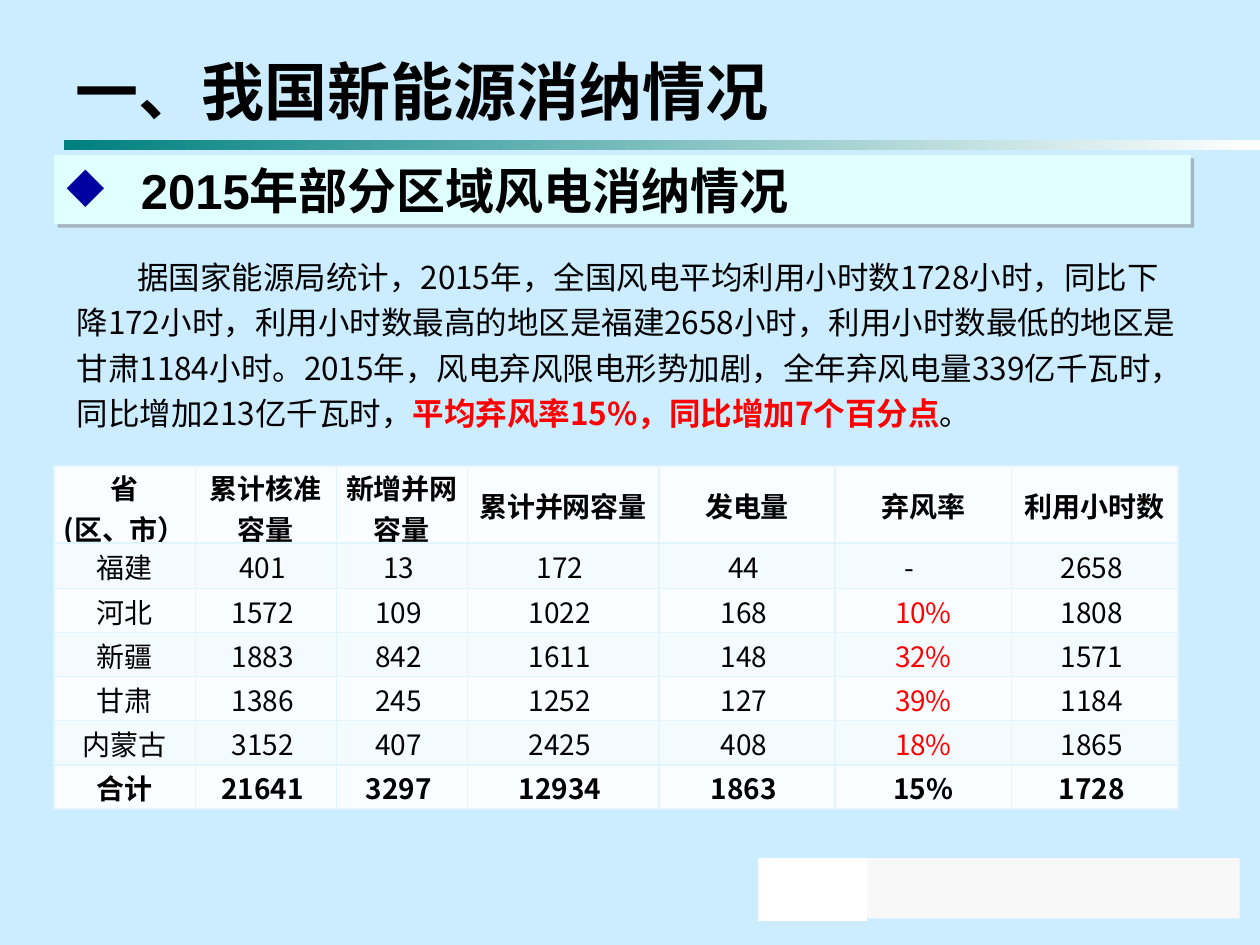
"""Build the slide on wind power absorption in selected Chinese regions, 2015."""
from lxml import etree
from pptx import Presentation
from pptx import util as u
from pptx.dml.color import RGBColor
from pptx.enum import shapes, text
from pptx.oxml import ns, parse_xml

W, H = 10, 7.5
SANS, LATIN = "Noto Sans CJK SC", "Arial"
COLORS = {
    "bg": "CCECFF", "teal": "008080", "white": "FFFFFF", "grey": "F8F8F8",
    "band": "E0FFFF", "bullet": "0000A0", "shadow": "808080", "text": "000000",
    "red": "FF0000", "border": "E2F4FF", "odd": "F4FBFF", "even": "FAFDFF",
}
TITLE = "一、我国新能源消纳情况"
HEADING = "2015年部分区域风电消纳情况"
BODY = [
    ("据国家能源局统计，2015年，全国风电平均利用小时数1728小时，同比下降172小时，"
     "利用小时数最高的地区是福建2658小时，利用小时数最低的地区是甘肃1184小时。"
     "2015年，风电弃风限电形势加剧，全年弃风电量339亿千瓦时，同比增加213亿千瓦时，", {}),
    ("平均弃风率15%，同比增加7个百分点", {"color": "red", "bold": True}),
    ("。", {}),
]
HEADER = ["省\n(区、市）", "累计核准容量", "新增并网容量", "累计并网容量", "发电量", "弃风率", "利用小时数"]
REGIONS = [
    ("福建", 401, 13, 172, 44, "-　", 2658),
    ("河北", 1572, 109, 1022, 168, "10%", 1808),
    ("新疆", 1883, 842, 1611, 148, "32%", 1571),
    ("甘肃", 1386, 245, 1252, 127, "39%", 1184),
    ("内蒙古", 3152, 407, 2425, 408, "18%", 1865),
]
TOTAL = ("合计", 21641, 3297, 12934, 1863, "15%", 1728)
COL_WIDTHS = [1.12, 1.12, 1.04, 1.52, 1.4, 1.4, 1.32]
ROW_HEIGHTS = [0.61, 0.36] + [0.35] * 5
NBSP = chr(160)


def rgb(name):
    return RGBColor.from_string(COLORS[name])


def write(p, content, size=18, color="text", bold=False, font=SANS):
    r = p.add_run()
    r.text = content
    r.font.size, r.font.bold, r.font.name = u.Pt(size), bold, font
    r.font.color.rgb = rgb(color)
    etree.SubElement(r.font._element, ns.qn("a:ea"), typeface=SANS)


def add_bar(s, box, fill):
    sp = s.shapes.add_shape(shapes.MSO_SHAPE.RECTANGLE, *map(u.Inches, box))
    sp.shadow.inherit = False
    sp.line.fill.background()
    if isinstance(fill, tuple):
        sp.fill.gradient()
        sp.fill.gradient_angle = 0
        for stop, name, position in zip(sp.fill.gradient_stops, fill, (0, 1)):
            stop.color.rgb = rgb(name)
            stop.position = position
    else:
        sp.fill.solid()
        sp.fill.fore_color.rgb = rgb(fill)
    return sp


def add_box(s, box, anchor):
    tf = s.shapes.add_textbox(*map(u.Inches, box)).text_frame
    tf.word_wrap = True
    tf.vertical_anchor = anchor
    return tf.paragraphs[0]


def add_heading(s, box):
    sp = add_bar(s, box, "band")
    effects = sp._element.spPr.find(ns.qn("a:effectLst"))
    effects.append(parse_xml(
        f'<a:outerShdw {ns.nsdecls("a")} blurRad="0" dist="{u.Pt(2.8)}" dir="2700000" '
        f'algn="ctr" rotWithShape="0"><a:srgbClr val="{COLORS["shadow"]}">'
        '<a:alpha val="50000"/></a:srgbClr></a:outerShdw>'))
    tf = sp.text_frame
    tf.word_wrap = True
    tf.vertical_anchor = text.MSO_ANCHOR.MIDDLE
    tf.margin_top = tf.margin_bottom = u.Inches(0.04)
    p = tf.paragraphs[0]
    p.alignment = text.PP_ALIGN.LEFT
    indent(p, 0.59, -0.59)
    pPr = p._p.get_or_add_pPr()
    color = etree.SubElement(pPr, ns.qn("a:buClr"))
    etree.SubElement(color, ns.qn("a:srgbClr"), val=COLORS["bullet"])
    etree.SubElement(pPr, ns.qn("a:buChar"), char="◆")
    write(p, HEADING, size=28, bold=True, font=LATIN)


def indent(p, left, first):
    pPr = p._p.get_or_add_pPr()
    pPr.set("marL", str(u.Inches(left)))
    pPr.set("indent", str(u.Inches(first)))


def fill_cell(cell, value, fill, **fmt):
    cell.fill.solid()
    cell.fill.fore_color.rgb = rgb(fill)
    cell.vertical_anchor = text.MSO_ANCHOR.MIDDLE
    cell.margin_left = cell.margin_right = cell.margin_top = u.Inches(0.01)
    cell.margin_bottom = 0
    content = f"{value}{NBSP}" if isinstance(value, int) else value
    tf = cell.text_frame
    for i, line in enumerate(content.split("\n")):
        p = tf.add_paragraph() if i else tf.paragraphs[0]
        p.alignment = text.PP_ALIGN.CENTER
        write(p, line, size=16, **fmt)
    for i, side in enumerate(("lnL", "lnR", "lnT", "lnB")):
        cell._tc.get_or_add_tcPr().insert(i, parse_xml(
            f'<a:{side} {ns.nsdecls("a")} w="{u.Pt(1)}"><a:solidFill>'
            f'<a:srgbClr val="{COLORS["border"]}"/></a:solidFill></a:{side}>'))


def add_region_table(s, left, top):
    rows = [HEADER, *REGIONS, TOTAL]
    size = map(u.Inches, (left, top, sum(COL_WIDTHS), sum(ROW_HEIGHTS)))
    table = s.shapes.add_table(len(rows), len(HEADER), *size).table
    for column, width in zip(table.columns, COL_WIDTHS):
        column.width = u.Inches(width)
    for i, (row, values) in enumerate(zip(table.rows, rows)):
        row.height = u.Inches(ROW_HEIGHTS[i])
        is_region = values in REGIONS
        for cell, value in zip(row.cells, values):
            is_rate = is_region and str(value).endswith("%")
            fill_cell(cell, value, "odd" if i % 2 else "even",
                      bold=not is_region, color="red" if is_rate else "text")


def main():
    prs = Presentation()
    prs.slide_width, prs.slide_height = u.Inches(W), u.Inches(H)
    s = prs.slides.add_slide(prs.slide_layouts[6])
    s.background.fill.solid()
    s.background.fill.fore_color.rgb = rgb("bg")

    add_bar(s, (0.51, 1.11, W - 0.51, 0.08), ("teal", "white"))
    add_bar(s, (6.18, 6.81, 3.66, 0.48), "grey")
    add_bar(s, (6.02, 6.81, 0.86, 0.5), "white")
    title = add_box(s, (0.5, 0.17, W - 1, 0.9), text.MSO_ANCHOR.BOTTOM)
    write(title, TITLE, size=36, bold=True, font=LATIN)
    add_heading(s, (0.43, 1.23, 9.02, 0.55))
    add_region_table(s, 0.43, 3.7)
    body = add_box(s, (0.51, 1.94, 8.94, 1.6), text.MSO_ANCHOR.TOP)
    indent(body, 0, 0.48)
    body.line_spacing = 1.2
    for content, fmt in BODY:
        write(body, content, **fmt)
    prs.save("out.pptx")


if __name__ == "__main__":
    main()
